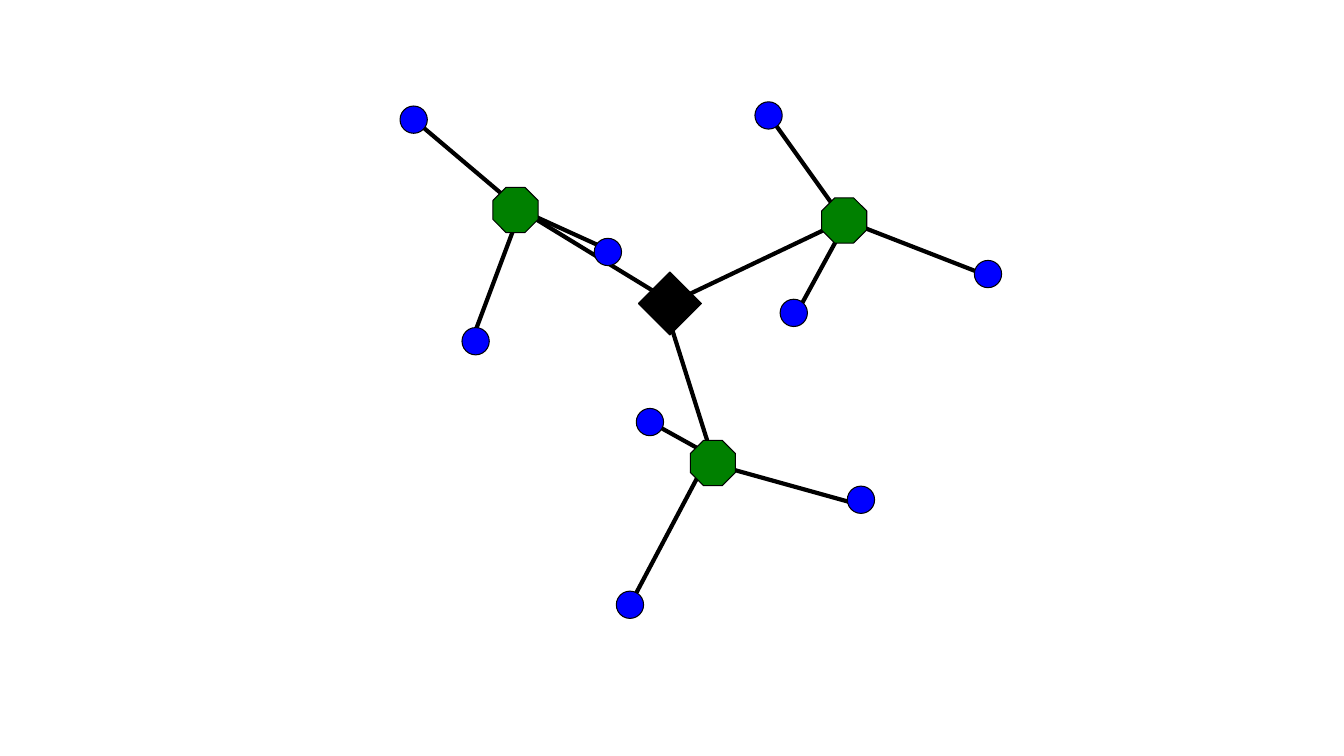
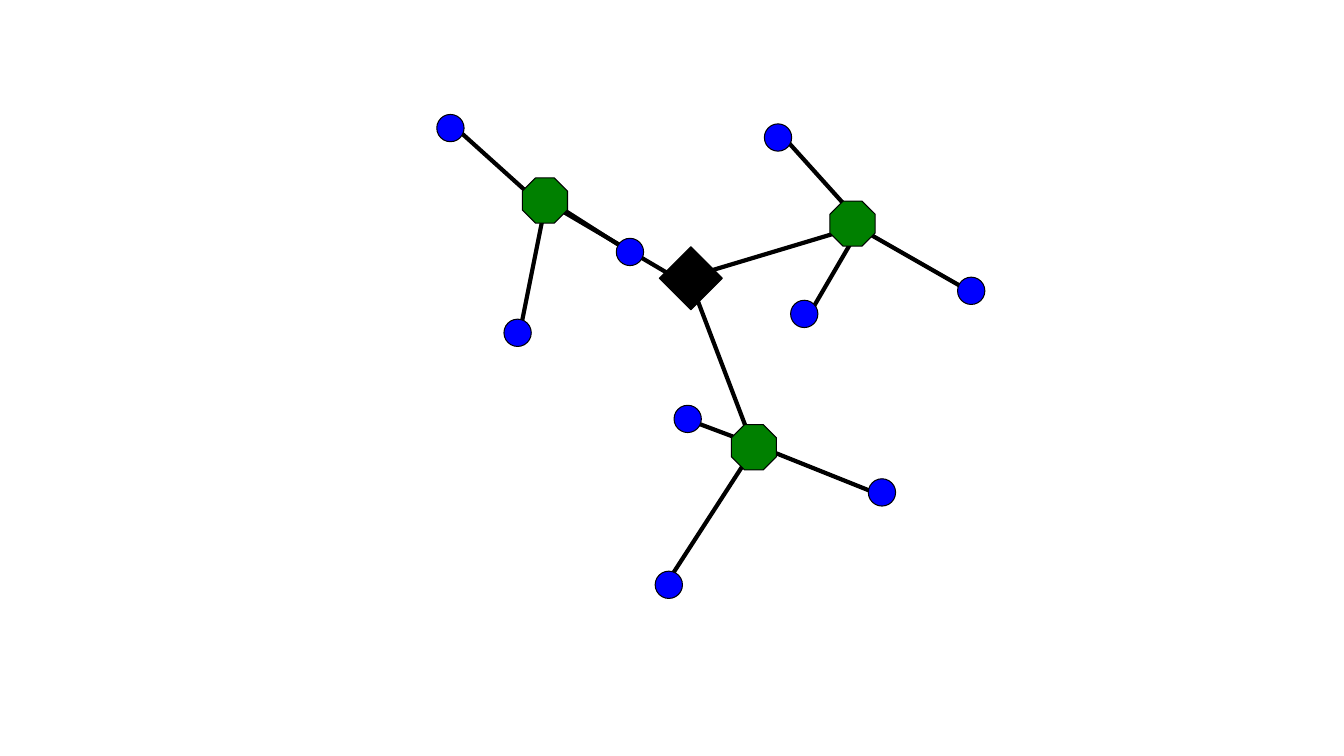
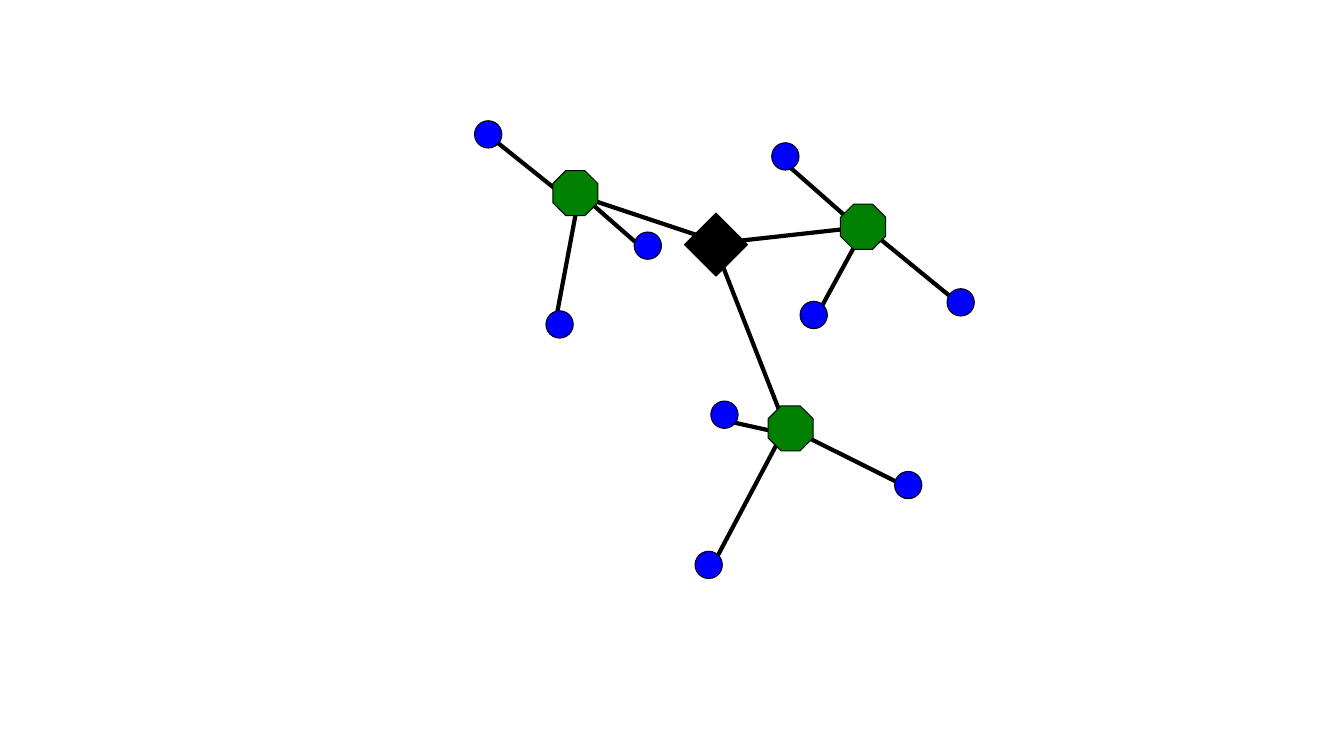
from pptx import Presentation
from pptx.dml.color import RGBColor
from pptx.enum.shapes import MSO_CONNECTOR, MSO_SHAPE
from pptx.oxml.ns import qn
from pptx.util import Pt
from lxml.etree import SubElement

PX = 9525
SIZE = {"slide_width": 1280, "slide_height": 720}
COLORS = {"ink": "000000", "node": "008000", "leaf": "0000FF"}
KINDS = {
    "hub": (MSO_SHAPE.DIAMOND, 60, "ink", None),
    "node": (MSO_SHAPE.OCTAGON, 43, "node", 0.29),
    "leaf": (MSO_SHAPE.FLOWCHART_CONNECTOR, 26, "leaf", None),
}

TREES = [
    {"hub": (638, 289), "nodes": [
        {"at": (491, 200), "link": (496, 200, 640, 288), "leaves": [
            ((394, 114), (392, 112, 496, 200)),
            ((579, 240), (496, 200, 584, 240)),
            ((453, 325), (496, 200, 448, 328))]},
        {"at": (804, 210), "link": (808, 208, 640, 288), "leaves": [
            ((732, 110), (728, 104, 808, 216)),
            ((756, 298), (808, 208, 760, 296)),
            ((941, 261), (800, 208, 944, 264))]},
        {"at": (679, 441), "link": (680, 440, 632, 288), "leaves": [
            ((619, 402), (616, 400, 688, 440)),
            ((600, 576), (672, 440, 600, 576)),
            ((820, 476), (672, 440, 816, 480))]},
    ]},
    {"hub": (658, 265), "nodes": [
        {"at": (519, 191), "link": (520, 192, 656, 272), "leaves": [
            ((429, 122), (432, 120, 512, 192)),
            ((600, 240), (512, 184, 600, 240)),
            ((493, 317), (520, 192, 496, 312))]},
        {"at": (812, 213), "link": (816, 216, 656, 264), "leaves": [
            ((741, 131), (744, 128, 816, 208)),
            ((766, 299), (824, 208, 768, 304)),
            ((925, 277), (816, 216, 928, 280))]},
        {"at": (718, 426), "link": (720, 432, 656, 264), "leaves": [
            ((655, 399), (656, 400, 720, 424)),
            ((637, 557), (720, 424, 632, 560)),
            ((840, 469), (720, 424, 840, 472))]},
    ]},
    {"hub": (682, 233), "nodes": [
        {"at": (548, 184), "link": (544, 184, 688, 232), "leaves": [
            ((465, 128), (544, 192, 464, 128)),
            ((617, 234), (552, 184, 616, 240)),
            ((533, 309), (552, 184, 528, 312))]},
        {"at": (822, 216), "link": (824, 216, 680, 232), "leaves": [
            ((748, 149), (744, 152, 835, 232)),
            ((775, 300), (824, 216, 776, 304)),
            ((915, 288), (824, 216, 912, 288))]},
        {"at": (753, 408), "link": (752, 416, 680, 232), "leaves": [
            ((690, 395), (688, 400, 760, 416)),
            ((675, 538), (752, 400, 680, 536)),
            ((865, 462), (752, 408, 864, 464))]},
    ]},
]


def color(name):
    return RGBColor.from_string(COLORS[name])


def stroke(line, width):
    line.color.rgb = color("ink")
    line.width = Pt(width)


def edge(slide, ends):
    link = slide.shapes.add_connector(
        MSO_CONNECTOR.STRAIGHT, *(n * PX for n in ends))
    stroke(link.line, 3)
    SubElement(link._element.spPr, qn("a:effectLst"))


def mark(slide, kind, spot):
    form, size, fill, cut = KINDS[kind]
    left, top = (round((n - size / 2) * PX) for n in spot)
    shape = slide.shapes.add_shape(form, left, top, size * PX, size * PX)
    shape.shadow.inherit = False
    shape.fill.solid()
    shape.fill.fore_color.rgb = color(fill)
    stroke(shape.line, 0.75)
    if cut:
        shape.adjustments[0] = cut


def draw(slide, tree):
    nodes = tree["nodes"]
    leaves = [leaf for node in nodes for leaf in node["leaves"]]
    for ends in [e for _, e in leaves] + [n["link"] for n in nodes]:
        edge(slide, ends)
    mark(slide, "hub", tree["hub"])
    for node in nodes:
        mark(slide, "node", node["at"])
    for spot, _ in leaves:
        mark(slide, "leaf", spot)


def main():
    deck = Presentation()
    for name, size in SIZE.items():
        setattr(deck, name, size * PX)
    for tree in TREES:
        draw(deck.slides.add_slide(deck.slide_layouts[6]), tree)
    deck.save("out.pptx")


if __name__ == "__main__":
    main()
